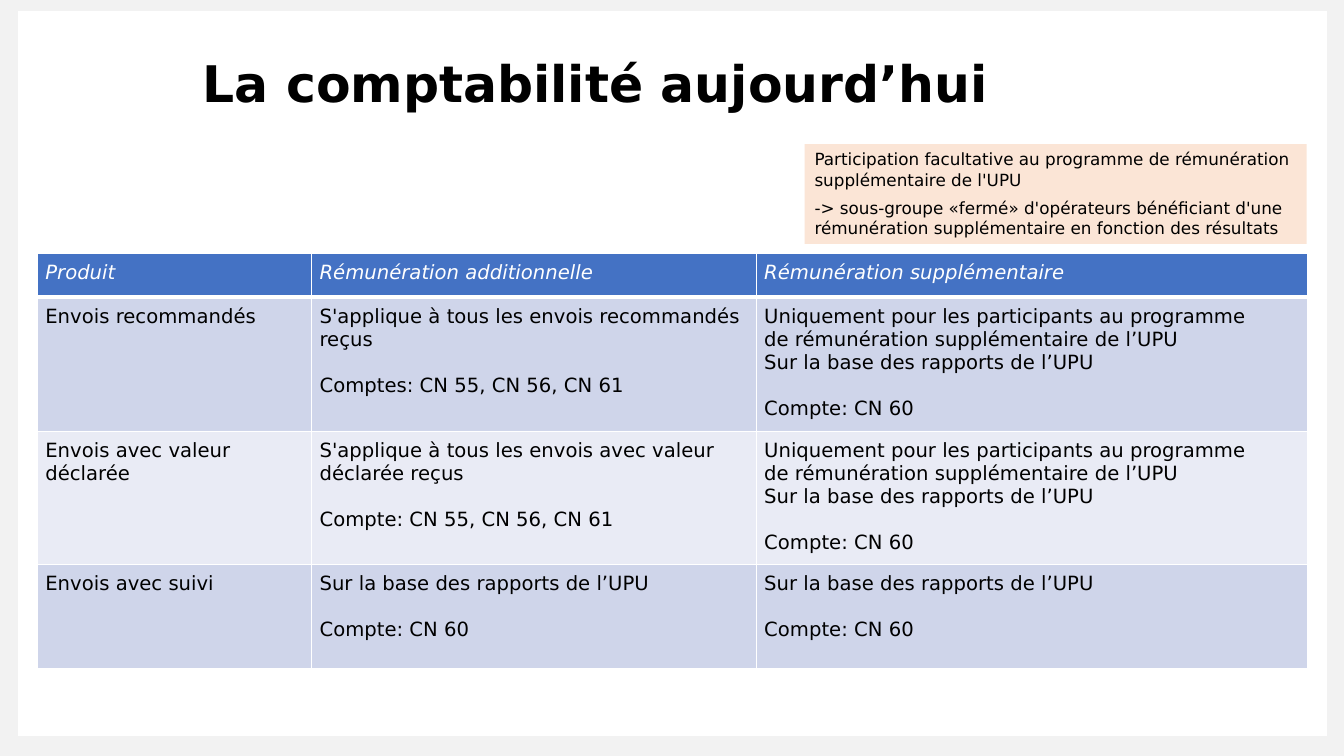
from lxml.etree import SubElement
from pptx import Presentation
from pptx.dml.color import RGBColor
from pptx.enum.shapes import MSO_SHAPE as Preset
from pptx.enum.text import MSO_ANCHOR as Anchor, MSO_AUTO_SIZE as AutoSize, PP_ALIGN as Align
from pptx.oxml.ns import qn
from pptx.util import Inches, Pt

COLORS = {
    "backdrop": "F2F2F2",
    "panel": "FFFFFF",
    "note": "FBE5D6",
    "header": "4472C4",
    "odd_row": "CFD5EA",
    "even_row": "E9EBF5",
    "border": "FFFFFF",
    "light_text": "FFFFFF",
    "text": "000000",
}
FONT = "DejaVu Sans"
LINE_GAP = 16.3
REPORTS = "Sur la base des rapports de l’UPU"
PARTICIPANTS = "Uniquement pour les participants au programme\nde rémunération supplémentaire de l’UPU"


def color(name):
    return RGBColor.from_string(COLORS[name])


def write(para, text, size=14, ink="text", bold=False, italic=False, before=0, spacing=None):
    para.alignment = Align.LEFT
    para.space_before = Pt(before)
    if spacing:
        para.line_spacing = spacing
    for index, line in enumerate(text.split("\n")):
        if index:
            para.add_line_break()
        span = para.add_run()
        span.text = line
        span.font.name = FONT
        span.font.size = Pt(size)
        span.font.bold = bold
        span.font.italic = italic
        span.font.color.rgb = color(ink)


class SlideBuilder:
    def __init__(self, deck):
        self.page = deck.slides.add_slide(deck.slide_layouts[5])
        backdrop = self.page.background.fill
        backdrop.solid()
        backdrop.fore_color.rgb = color("backdrop")

    def title(self, text, left, top, width, height):
        box = self.page.shapes.title
        box.left, box.top = Inches(left), Inches(top)
        box.width, box.height = Inches(width), Inches(height)
        box.text_frame.vertical_anchor = Anchor.MIDDLE
        box.text_frame.word_wrap = True
        write(box.text_frame.paragraphs[0], text, size=36, bold=True, spacing=0.9)

    def rectangle(self, fill, left, top, width, height):
        box = self.page.shapes.add_shape(
            Preset.RECTANGLE, Inches(left), Inches(top), Inches(width), Inches(height)
        )
        box.shadow.inherit = False
        box.fill.solid()
        box.fill.fore_color.rgb = color(fill)
        box.line.fill.background()
        return box

    def panel(self, *place):
        box = self.rectangle("panel", *place)
        box.element.getparent().insert(2, box.element)

    def note(self, texts, *place):
        frame = self.rectangle("note", *place).text_frame
        frame.word_wrap = True
        frame.vertical_anchor = Anchor.TOP
        frame.auto_size = AutoSize.SHAPE_TO_FIT_TEXT
        self.fill_text(frame, texts, [0, 6], size=12)

    def fill_text(self, frame, texts, gaps, **style):
        for index, (text, gap) in enumerate(zip(texts, gaps)):
            para = frame.add_paragraph() if index else frame.paragraphs[0]
            write(para, text, before=gap, **style)

    def cell(self, cell, texts, fill, bottom=1, **style):
        cell.margin_left = cell.margin_right = Inches(0.08)
        cell.margin_top = cell.margin_bottom = Inches(0.08)
        cell.vertical_anchor = Anchor.TOP
        properties = cell._tc.get_or_add_tcPr()
        for side, points in (("L", 1), ("R", 1), ("T", 1), ("B", bottom)):
            line = SubElement(properties, qn(f"a:ln{side}"), w=str(Pt(points)))
            paint = SubElement(line, qn("a:solidFill"))
            SubElement(paint, qn("a:srgbClr"), val=COLORS["border"])
        cell.fill.solid()
        cell.fill.fore_color.rgb = color(fill)
        gaps = [0] * (len(texts) - 1) + [LINE_GAP if len(texts) > 1 else 0]
        self.fill_text(cell.text_frame, texts, gaps, **style)

    def table(self, header, rows, left, top, widths, heights):
        grid = self.page.shapes.add_table(
            len(heights), len(widths), Inches(left), Inches(top),
            Inches(sum(widths)), Inches(sum(heights)),
        ).table
        for column, width in zip(grid.columns, widths):
            column.width = Inches(width)
        for row, height in zip(grid.rows, heights):
            row.height = Inches(height)
        for index, text in enumerate(header):
            self.cell(grid.cell(0, index), [text], "header", bottom=3, ink="light_text", italic=True)
        for number, row in enumerate(rows, 1):
            fill = "odd_row" if number % 2 else "even_row"
            for index, texts in enumerate(row):
                self.cell(grid.cell(number, index), texts, fill)


def main():
    deck = Presentation()
    deck.slide_width, deck.slide_height = Inches(13.33), Inches(7.5)
    builder = SlideBuilder(deck)
    builder.panel(0.18, 0.11, 12.98, 7.19)
    builder.title("La comptabilité aujourd’hui", 1.91, 0.54, 8.71, 0.63)
    builder.note(
        [
            "Participation facultative au programme de rémunération supplémentaire de l'UPU",
            "-> sous-groupe «fermé» d'opérateurs bénéficiant d'une rémunération "
            "supplémentaire en fonction des résultats",
        ],
        7.98, 1.43, 4.98, 0.99,
    )
    supplementary = [PARTICIPANTS, REPORTS, "Compte: CN 60"]
    tracked = [REPORTS, "Compte: CN 60"]
    builder.table(
        ["Produit", "Rémunération additionnelle", "Rémunération supplémentaire"],
        [
            [
                ["Envois recommandés"],
                ["S'applique à tous les envois recommandés reçus", "Comptes: CN 55, CN 56, CN 61"],
                supplementary,
            ],
            [
                ["Envois avec valeur déclarée"],
                ["S'applique à tous les envois avec valeur déclarée reçus", "Compte: CN 55, CN 56, CN 61"],
                supplementary,
            ],
            [["Envois avec suivi"], tracked, tracked],
        ],
        0.37, 2.51, [2.72, 4.41, 5.47], [0.44, 1.33, 1.32, 1.03],
    )
    deck.save("out.pptx")


if __name__ == "__main__":
    main()
